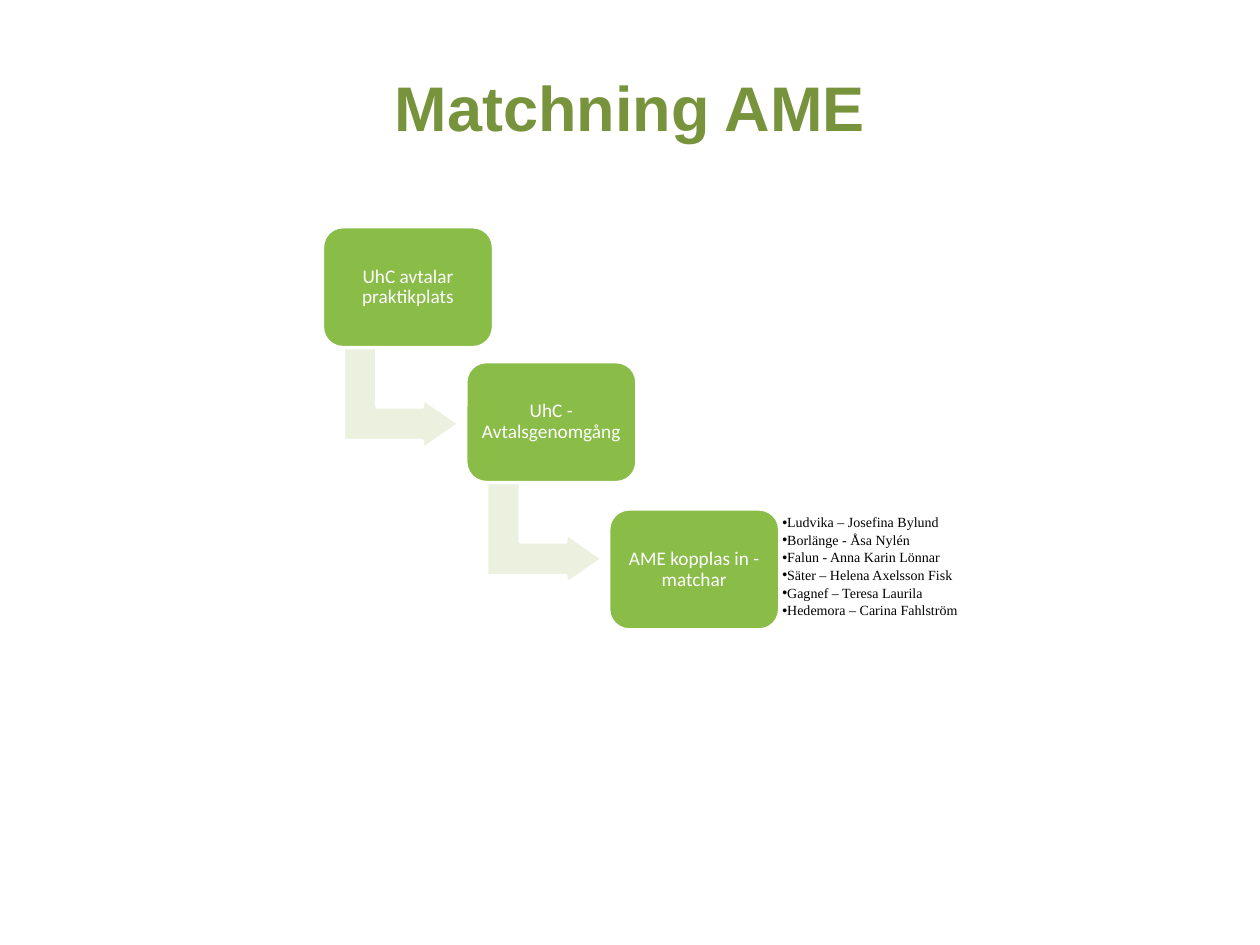
from dataclasses import dataclass

from lxml import etree
from pptx import Presentation
from pptx import util as u
from pptx.dml.color import RGBColor
from pptx.enum import shapes, text
from pptx.oxml import ns

GREEN, PALE_GREEN, OLIVE = "8ABC48", "EBF1DE", "77933C"
WHITE, BLACK = "FFFFFF", "000000"
BOX_WIDTH, BOX_HEIGHT = 3.45, 2.44
ARROW_WIDTH, ARROW_HEIGHT = 2.06, 2.34
ARROW_OFFSET_X, ARROW_OFFSET_Y = 0.56, 2.29


@dataclass
class Step:
    label: str
    left: float
    top: float


STEPS = [
    Step("UhC avtalar praktikplats", 6.5, 4.57),
    Step("UhC - Avtalsgenomgång", 9.39, 7.29),
    Step("AME kopplas in - matchar", 12.27, 10.26),
]
CONTACTS = [
    "Ludvika – Josefina Bylund",
    "Borlänge - Åsa Nylén",
    "Falun - Anna Karin Lönnar",
    "Säter – Helena Axelsson Fisk",
    "Gagnef – Teresa Laurila",
    "Hedemora – Carina Fahlström",
]


def color(value: str) -> RGBColor:
    return RGBColor.from_string(value)


def place(shape, left: float, top: float, width: float, height: float) -> None:
    shape.left, shape.top = u.Cm(left), u.Cm(top)
    shape.width, shape.height = u.Cm(width), u.Cm(height)


def format_frame(frame, margin: float) -> None:
    frame.word_wrap = True
    frame.auto_size = text.MSO_AUTO_SIZE.NONE
    frame.vertical_anchor = text.MSO_ANCHOR.MIDDLE
    frame.margin_left = frame.margin_right = u.Cm(margin)
    frame.margin_top = frame.margin_bottom = u.Cm(margin)


def format_font(paragraph, name: str, size: float, value: str, bold: bool = False) -> None:
    font = paragraph.font
    font.name, font.size, font.bold = name, u.Pt(size), bold
    font.color.rgb = color(value)


def add_block(slide, kind, left: float, top: float, width: float, height: float,
              fill: str, adjustments: list[float]):
    shape = slide.shapes.add_shape(kind, u.Cm(left), u.Cm(top), u.Cm(width), u.Cm(height))
    shape.shadow.inherit = False
    shape.fill.solid()
    shape.fill.fore_color.rgb = color(fill)
    shape.line.color.rgb = color(WHITE)
    shape.line.width = u.Pt(2)
    for index, value in enumerate(adjustments):
        shape.adjustments[index] = value
    return shape


def add_step(slide, step: Step) -> None:
    box = add_block(slide, shapes.MSO_SHAPE.ROUNDED_RECTANGLE, step.left, step.top,
                    BOX_WIDTH, BOX_HEIGHT, GREEN, [0.17])
    format_frame(box.text_frame, 0.12)
    paragraph = box.text_frame.paragraphs[0]
    paragraph.text = step.label
    paragraph.alignment = text.PP_ALIGN.CENTER
    paragraph.line_spacing = 0.9
    format_font(paragraph, "Calibri", 11, WHITE)


def add_arrow(slide, step: Step) -> None:
    arrow = add_block(slide, shapes.MSO_SHAPE.BENT_UP_ARROW, step.left + ARROW_OFFSET_X,
                      step.top + ARROW_OFFSET_Y, ARROW_WIDTH, ARROW_HEIGHT,
                      PALE_GREEN, [0.33, 0.25, 0.36])
    arrow.rotation = 90


def fill_contacts(body) -> None:
    place(body, 15.54, 9.96, 6.5, 2.95)
    frame = body.text_frame
    format_frame(frame, 0.08)
    for index, contact in enumerate(CONTACTS):
        paragraph = frame.paragraphs[0] if index == 0 else frame.add_paragraph()
        paragraph.text = contact
        paragraph.level = 1
        paragraph.line_spacing = 0.9
        paragraph.space_before = u.Pt(0)
        paragraph.space_after = u.Pt(1.4)
        properties = paragraph._p.get_or_add_pPr()
        properties.set("marL", str(u.Cm(0.15)))
        properties.set("indent", "0")
        etree.SubElement(properties, ns.qn("a:buChar")).set("char", "•")
        format_font(paragraph, "Times New Roman", 8, BLACK)


def main() -> None:
    presentation = Presentation()
    presentation.slide_width, presentation.slide_height = u.Cm(25.4), u.Cm(19.05)
    slide = presentation.slides.add_slide(presentation.slide_layouts[1])

    # Title
    title = slide.shapes.title
    place(title, 1.27, 1.17, 22.86, 1.96)
    format_frame(title.text_frame, 0.13)
    heading = title.text_frame.paragraphs[0]
    heading.text = "Matchning AME"
    heading.alignment = text.PP_ALIGN.CENTER
    format_font(heading, "Arial", 36, OLIVE, bold=True)

    # Staircase of steps, with an arrow from each step to the next
    for step in STEPS[:-1]:
        add_arrow(slide, step)
    for step in STEPS:
        add_step(slide, step)

    # Contacts beside the last step
    fill_contacts(slide.placeholders[1])

    presentation.save("out.pptx")


if __name__ == "__main__":
    main()
